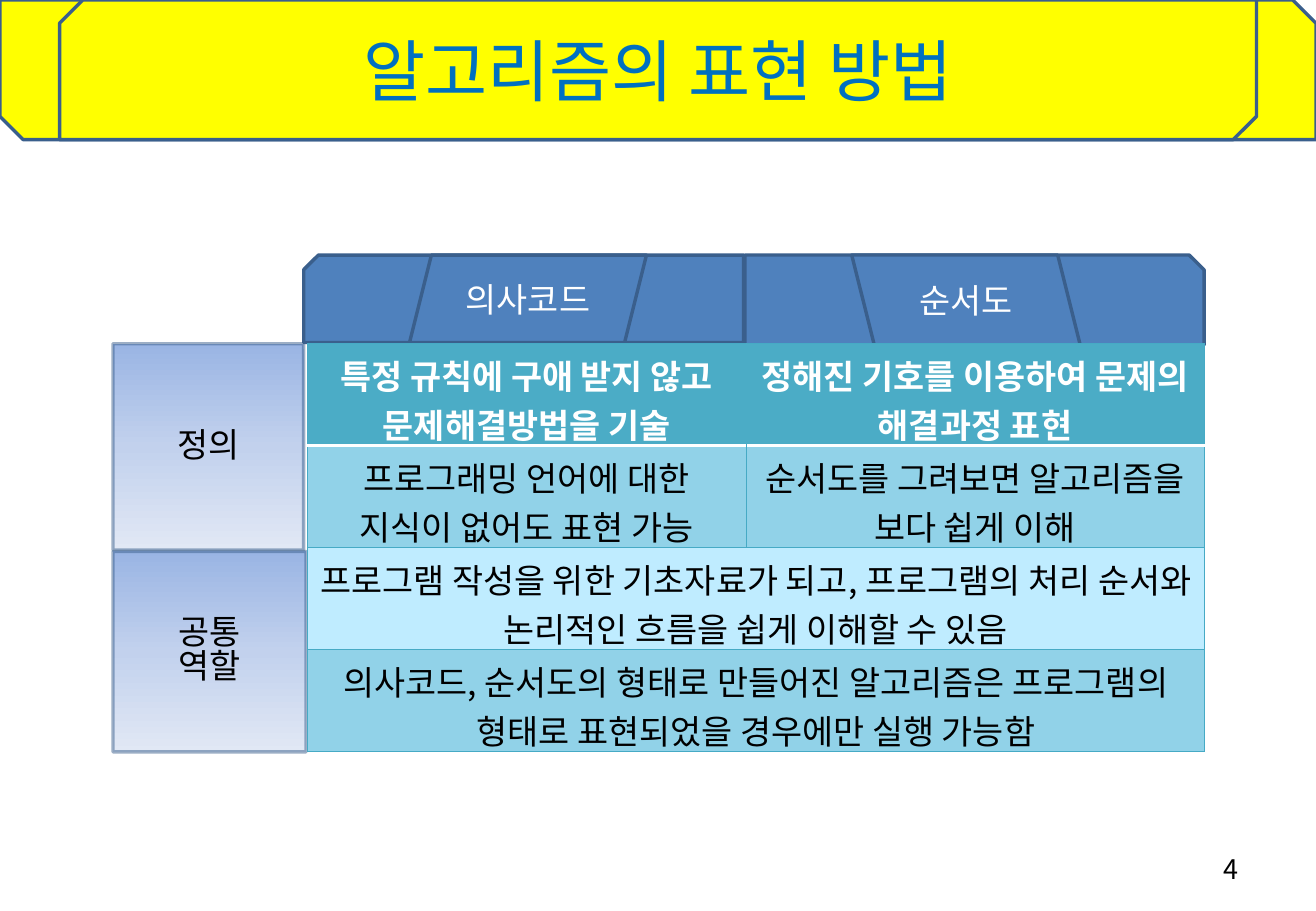
from copy import deepcopy

from pptx import Presentation, oxml
from pptx.dml.color import RGBColor
from pptx.enum import shapes, text
from pptx.oxml import ns
from pptx.util import Inches, Pt

FONT = "Noto Sans CJK KR"
YELLOW = RGBColor(0xFF, 0xFF, 0x00)
TITLE_BLUE = RGBColor(0x00, 0x70, 0xC0)
BLUE = RGBColor(0x4F, 0x81, 0xBD)
NAVY = RGBColor(0x3A, 0x5F, 0x8C)
BLACK = RGBColor(0x00, 0x00, 0x00)
WHITE = RGBColor(0xFF, 0xFF, 0xFF)
TEAL = RGBColor(0x4B, 0xAC, 0xC6)
TEAL_LINE = RGBColor(0x46, 0xAA, 0xC5)
BAND = RGBColor(0x91, 0xD2, 0xE8)
PALE = RGBColor(0xBF, 0xEC, 0xFF)
GRADIENT = [(0, RGBColor(0x9A, 0xB5, 0xE4)), (0.5, RGBColor(0xC2, 0xD1, 0xED)),
            (1, RGBColor(0xE1, 0xE8, 0xF5))]

SNIP2, SNIP1, SLANT, RECT = (
    shapes.MSO_SHAPE.SNIP_2_DIAG_RECTANGLE, shapes.MSO_SHAPE.SNIP_1_RECTANGLE,
    shapes.MSO_SHAPE.PARALLELOGRAM, shapes.MSO_SHAPE.RECTANGLE)

TITLE = "알고리즘의 표현 방법"
PAGE = "4"
BANNERS = [((0, 0, 10.83, 1.15), None), ((0.49, 0, 9.85, 1.15), "flipV")]
TABS = [
    ("의사코드", (2.5, 2.1, 3.62, 0.72), "flipH", (3.37, 2.1, 1.95, 0.72), None),
    ("순서도", (6.13, 2.1, 3.78, 0.74), None, (7.01, 2.1, 1.88, 0.74), "flipH"),
]
LABELS = [("정의", (0.93, 2.83, 1.57, 1.7)), ("공통\n역할", (0.93, 4.54, 1.59, 1.65))]
COLS = [3.61, 3.77]
ROW_H = 0.84
ROWS = [
    (TEAL, ["특정 규칙에 구애 받지 않고 문제해결방법을 기술",
            "정해진 기호를 이용하여 문제의 해결과정 표현"]),
    (BAND, ["프로그래밍 언어에 대한 지식이 없어도 표현 가능",
            "순서도를 그려보면 알고리즘을 보다 쉽게 이해"]),
    (PALE, ["프로그램 작성을 위한 기초자료가 되고, 프로그램의 처리 순서와 "
            "논리적인 흐름을 쉽게 이해할 수 있음"]),
    (BAND, ["의사코드, 순서도의 형태로 만들어진 알고리즘은 프로그램의 형태로 "
            "표현되었을 경우에만 실행 가능함"]),
]


def write(tf, words, size, color, align=text.PP_ALIGN.CENTER, bold=False, spacing=None):
    """Fill a text frame with evenly formatted paragraphs."""
    tf.text = words
    tf.word_wrap = True
    tf.vertical_anchor = text.MSO_ANCHOR.MIDDLE
    for p in tf.paragraphs:
        p.alignment = align
        if spacing:
            p.line_spacing = spacing
        for r in p.runs:
            r.font.size, r.font.bold, r.font.name = Pt(size), bold, FONT
            r.font.color.rgb = color
            ea = oxml.parse_xml(f'<a:ea {ns.nsdecls("a")} typeface="{FONT}"/>')
            r.font._element.find(ns.qn("a:latin")).addnext(ea)


def add_block(s, kind, box, fill, flip=None):
    """Add a filled, outlined preset shape."""
    sp = s.shapes.add_shape(kind, *map(Inches, box))
    sp.shadow.inherit = False
    sp.fill.solid()
    sp.fill.fore_color.rgb = fill
    sp.line.color.rgb = NAVY
    sp.line.width = Pt(2)
    if flip:
        sp.element.spPr.find(ns.qn("a:xfrm")).set(flip, "1")
    return sp


def add_label(s, words, box):
    """Add a row label with a vertical gradient and a half-clear outline."""
    sp = add_block(s, RECT, box, BLUE)
    sp.fill.gradient()
    sp.fill.gradient_angle = 270
    first = sp.element.spPr.find(".//" + ns.qn("a:gs"))
    first.addnext(deepcopy(first))
    for stop, (position, color) in zip(sp.fill.gradient_stops, GRADIENT):
        stop.position = position
        stop.color.rgb = color
    clear = oxml.parse_xml(f'<a:alpha {ns.nsdecls("a")} val="50000"/>')
    sp.element.spPr.find(f'{ns.qn("a:ln")}//{ns.qn("a:srgbClr")}').append(clear)
    write(sp.text_frame, words, 20, BLACK, spacing=0.84)


def set_borders(cell, row, col):
    """Draw the four borders of a table cell."""
    borders = {side: (TEAL_LINE, 0.75) for side in "LRTB"}
    if row == 0:
        borders["B"] = (WHITE, 2)
        borders["L" if col else "R"] = (TEAL, 0.75)
    elif row == 1:
        borders["T"] = (WHITE, 2)
    for side, (color, width) in borders.items():
        cell._tc.get_or_add_tcPr().append(oxml.parse_xml(
            f'<a:ln{side} {ns.nsdecls("a")} w="{Pt(width)}"><a:solidFill>'
            f'<a:srgbClr val="{color}"/></a:solidFill></a:ln{side}>'))


def add_grid(s):
    """Add the comparison table."""
    box = map(Inches, (2.53, 2.83, sum(COLS), ROW_H * len(ROWS)))
    tbl = s.shapes.add_table(len(ROWS), len(COLS), *box).table
    tbl.first_row = tbl.horz_banding = False
    for col, width in enumerate(COLS):
        tbl.columns[col].width = Inches(width)
    for i, (fill, words) in enumerate(ROWS):
        tbl.rows[i].height = Inches(ROW_H)
        if len(words) == 1:
            tbl.cell(i, 0).merge(tbl.cell(i, 1))
        for j in range(len(COLS)):
            cell = tbl.cell(i, j)
            set_borders(cell, i, j)
            cell.fill.solid()
            cell.fill.fore_color.rgb = fill
            if j < len(words):
                write(cell.text_frame, words[j], 20, BLACK if i else WHITE, bold=i == 0)
                cell.vertical_anchor = text.MSO_ANCHOR.MIDDLE


def main():
    """Build the slide."""
    prs = Presentation()
    prs.slide_width, prs.slide_height = Inches(10.83), Inches(7.5)
    s = prs.slides.add_slide(prs.slide_layouts[5])
    for box, flip in BANNERS:
        add_block(s, SNIP2, box, YELLOW, flip)
    title = s.shapes.title
    title.left, title.top, title.width, title.height = map(Inches, BANNERS[0][0])
    write(title.text_frame, TITLE, 40, TITLE_BLUE)
    s.shapes.element.append(title.element)
    page = s.shapes.add_textbox(*map(Inches, (7.76, 6.95, 2.53, 0.4)))
    write(page.text_frame, PAGE, 16, BLACK, text.PP_ALIGN.RIGHT)
    for words, back, back_flip, front, front_flip in TABS:
        add_block(s, SNIP1, back, BLUE, back_flip)
        sp = add_block(s, SLANT, front, BLUE, front_flip)
        write(sp.text_frame, words, 20, WHITE)
    for words, box in LABELS:
        add_label(s, words, box)
    add_grid(s)
    prs.save("out.pptx")


if __name__ == "__main__":
    main()
